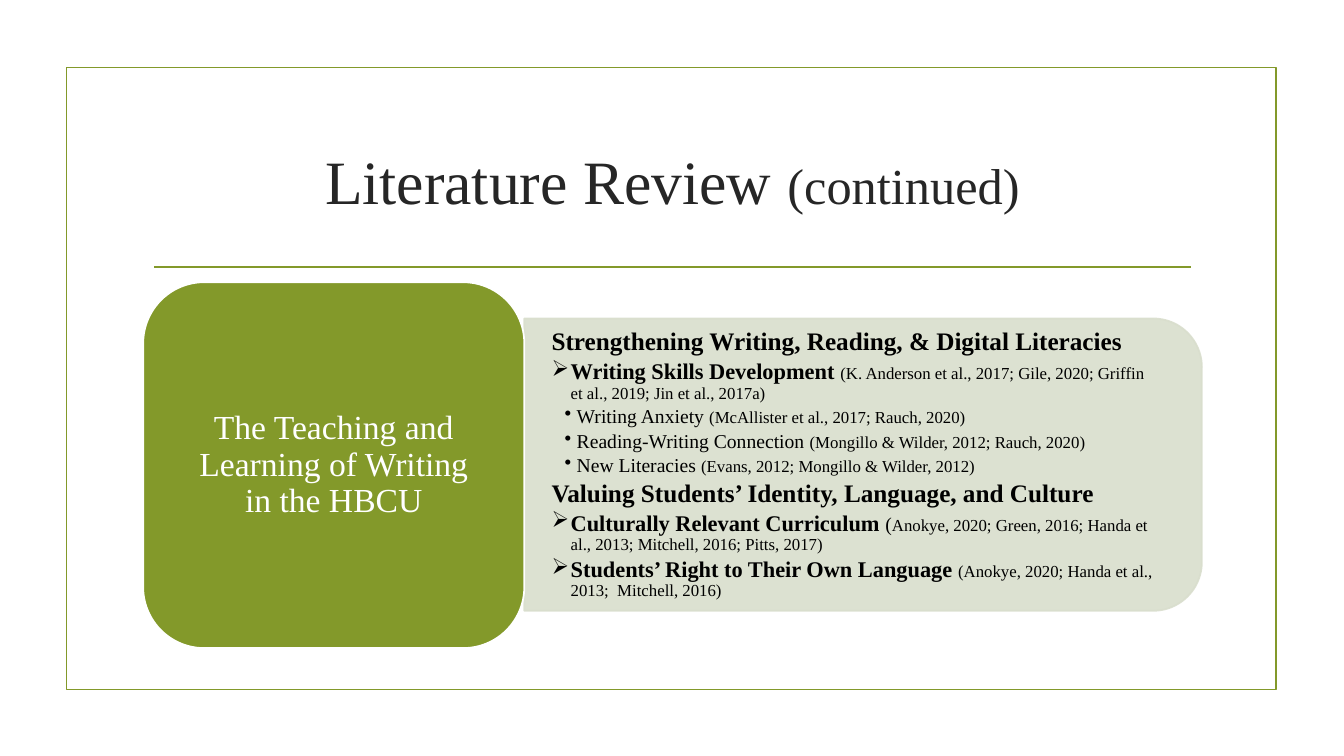
from lxml.etree import SubElement
from pptx import Presentation
from pptx.dml.color import RGBColor
from pptx.enum.shapes import MSO_CONNECTOR, MSO_SHAPE
from pptx.enum.text import MSO_ANCHOR, PP_ALIGN
from pptx.oxml.ns import qn
from pptx.util import Inches, Pt

FONT = "Times New Roman"
GREEN, PALE, WHITE, BLACK, DARK = "83992A", "D9DECD", "FFFFFF", "000000", "262626"

# Outline style: kind -> (level, left margin, first-line indent, bullet, size, bold)
OUTLINE = {
    "heading": (1, 0.19, -0.19, None, 18, True),
    "topic": (1, 0.19, -0.19, "➢", 16, True),
    "detail": (2, 0.25, -0.12, "•", 14, False),
}
CITATION_SIZE = 12

# Each entry: kind, main text, then the citation runs as (text, size)
LITERATURE = [
    ("heading", "Strengthening Writing, Reading, & Digital Literacies", []),
    ("topic", "Writing Skills Development ",
     [("(K. Anderson et al., 2017; Gile, 2020; Griffin et al., 2019; Jin et al., 2017a)", CITATION_SIZE)]),
    ("detail", "Writing Anxiety ", [("(McAllister et al., 2017; Rauch, 2020)", CITATION_SIZE)]),
    ("detail", "Reading-Writing Connection ", [("(Mongillo & Wilder, 2012; Rauch, 2020)", CITATION_SIZE)]),
    ("detail", "New Literacies ", [("(Evans, 2012; Mongillo & Wilder, 2012)", CITATION_SIZE)]),
    ("heading", "Valuing Students’ Identity, Language, and Culture", []),
    ("topic", "Culturally Relevant Curriculum ",
     [("(", 14), ("Anokye, 2020; Green, 2016; Handa et al., 2013; Mitchell, 2016; Pitts, 2017)", CITATION_SIZE)]),
    ("topic", "Students’ Right to Their Own Language ",
     [("(Anokye, 2020; Handa et al., 2013;  Mitchell, 2016)", CITATION_SIZE)]),
]


def color(value):
    return RGBColor.from_string(value)


class SlideBuilder:
    def __init__(self, page, font, line_width):
        self.page, self.font, self.line_width = page, font, Pt(line_width)

    def span(self, para, text, size, ink, bold=False):
        run = para.add_run()
        run.text = text
        run.font.name, run.font.size, run.font.bold = self.font, Pt(size), bold
        run.font.color.rgb = color(ink)

    def frame(self, box, margin_x, margin_y):
        frame = box.text_frame
        frame.word_wrap = True
        frame.vertical_anchor = MSO_ANCHOR.MIDDLE
        frame.margin_left = frame.margin_right = Inches(margin_x)
        frame.margin_top = frame.margin_bottom = Inches(margin_y)
        return frame

    def title(self, place, spans):
        box = self.page.shapes.title
        box.left, box.top, box.width, box.height = map(Inches, place)
        para = self.frame(box, 0.1, 0.05).paragraphs[0]
        para.alignment = PP_ALIGN.CENTER
        for text, size in spans:
            self.span(para, text, size, DARK)

    def shape(self, kind, place, fill, line, rotation=0, opacity=100):
        shape = self.page.shapes.add_shape(kind, *map(Inches, place))
        shape.shadow.inherit = False
        shape.rotation = rotation
        shape.line.color.rgb = color(line)
        shape.line.width = self.line_width
        if fill is None:
            shape.fill.background()
        else:
            shape.fill.solid()
            shape.fill.fore_color.rgb = color(fill)
        if opacity < 100:
            for tint in shape.element.spPr.iter(qn("a:srgbClr")):
                SubElement(tint, qn("a:alpha")).set("val", str(opacity * 1000))
        return shape

    def rule(self, left, right, y, ink):
        line = self.page.shapes.add_connector(
            MSO_CONNECTOR.STRAIGHT, Inches(left), Inches(y), Inches(right), Inches(y))
        line.line.color.rgb = color(ink)
        line.line.width = self.line_width
        SubElement(line.element.spPr, qn("a:effectLst"))

    def label(self, shape, text, size, ink):
        para = self.frame(shape, 0.27, 0.2).paragraphs[0]
        para.alignment = PP_ALIGN.CENTER
        para.line_spacing = 0.9
        self.span(para, text, size, ink)

    def outline(self, place, entries):
        box = self.page.shapes.add_textbox(*map(Inches, place))
        frame = self.frame(box, 0.27, 0.14)
        for index, (kind, text, citations) in enumerate(entries):
            level, margin, indent, bullet, size, bold = OUTLINE[kind]
            para = frame.add_paragraph() if index else frame.paragraphs[0]
            para.level = level
            para.line_spacing = 0.9
            para.space_after = Pt(round(size * 0.17, 1))
            props = para._p.get_or_add_pPr()
            props.set("marL", str(Inches(margin)))
            props.set("indent", str(Inches(indent)))
            if bullet:
                SubElement(props, qn("a:buChar")).set("char", bullet)
            self.span(para, text, size, BLACK, bold)
            for citation, citation_size in citations:
                self.span(para, citation, citation_size, BLACK)


def main():
    deck = Presentation()
    deck.slide_width, deck.slide_height = Inches(13.33), Inches(7.5)
    page = deck.slides.add_slide(deck.slide_layouts[5])
    builder = SlideBuilder(page, FONT, 1.25)

    # Page border, title and rule
    builder.shape(MSO_SHAPE.RECTANGLE, (0.66, 0.67, 12, 6.17), None, GREEN)
    builder.title((1.42, 1.07, 10.5, 1.43), [("Literature Review ", 44), ("(continued)", 36)])
    builder.rule(1.53, 11.81, 2.65, GREEN)

    # Literature panel
    builder.shape(MSO_SHAPE.ROUND_2_SAME_RECTANGLE, (7.11, 1.25, 2.9, 6.72),
                  PALE, PALE, rotation=90, opacity=90)
    builder.outline((5.2, 3.3, 6.58, 2.62), LITERATURE)

    # Theme block
    theme = builder.shape(MSO_SHAPE.ROUNDED_RECTANGLE, (1.42, 2.8, 3.78, 3.63), GREEN, WHITE)
    builder.label(theme, "The Teaching and Learning of Writing in the HBCU", 24, WHITE)

    deck.save("out.pptx")


if __name__ == "__main__":
    main()
